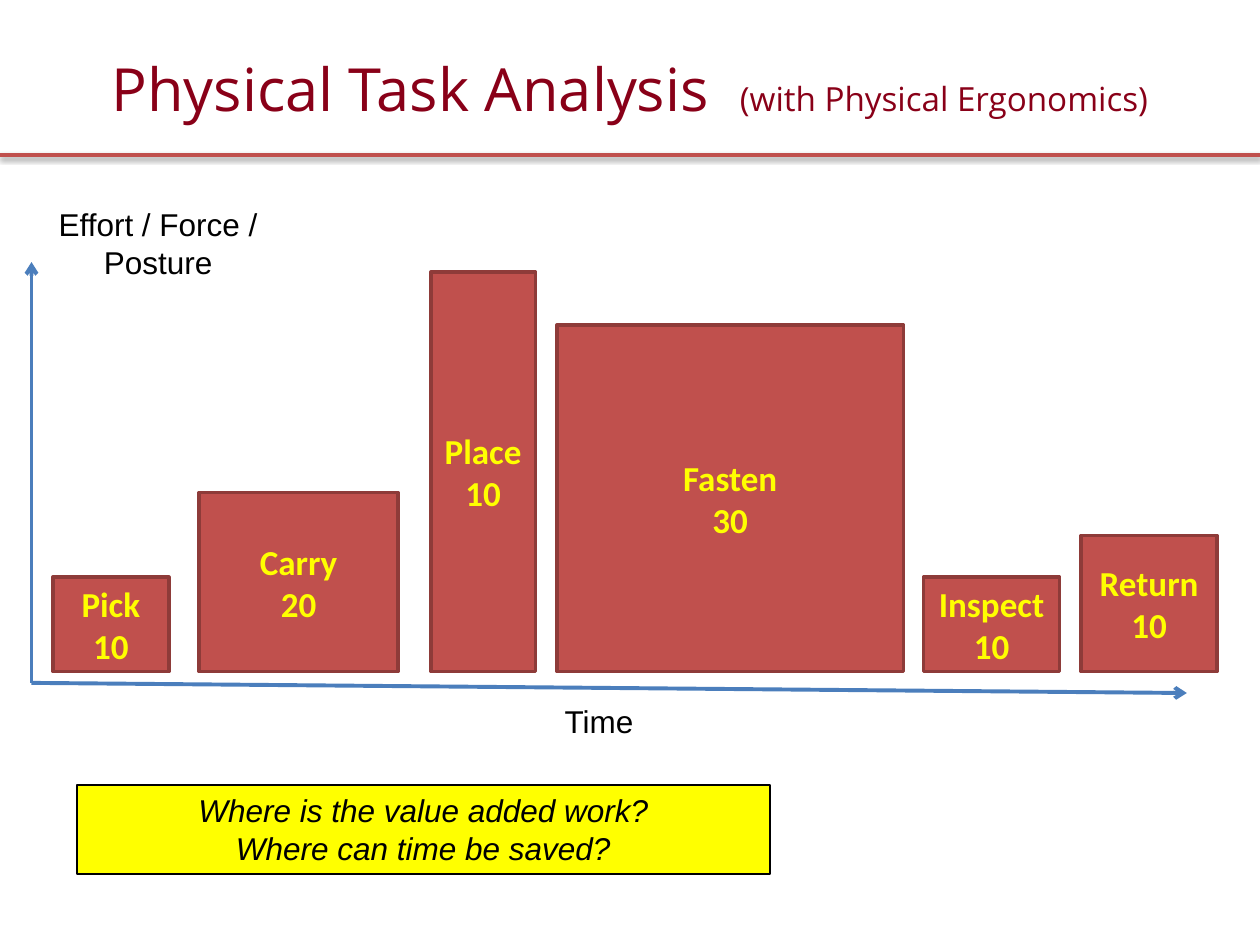
"""Build the physical task analysis slide: effort of each task step over time."""
from lxml.etree import SubElement
from pptx import Presentation
from pptx.dml.color import RGBColor as RGB
from pptx.enum.shapes import MSO_CONNECTOR as CONNECTOR, MSO_SHAPE as SHAPE
from pptx.enum.text import MSO_ANCHOR as ANCHOR, PP_ALIGN as ALIGN
from pptx.oxml.ns import qn
from pptx.util import Inches, Pt

TITLE = [("Physical Task Analysis  ", "title"), ("(with Physical Ergonomics)", "subtitle")]
TASKS = [
    ("Pick", 10, 0.42, 0.92, 0.75),
    ("Carry", 20, 1.58, 1.58, 1.42),
    ("Place", 10, 3.42, 0.83, 3.17),
    ("Fasten", 30, 4.42, 2.75, 2.75),
    ("Inspect", 10, 7.33, 1.08, 0.75),
    ("Return", 10, 8.58, 1.08, 1.08),
]
BASELINE = 5.33
ORIGIN = (0.25, 5.42)
AXIS_ENDS = [(0.25, 2.08), (9.42, 5.5)]
AXIS_LABELS = [
    ("Effort / Force / Posture", (0.17, 1.58, 2.17, 0.71)),
    ("Time", (3.92, 5.52, 1.67, 0.4)),
]
QUESTIONS = ["Where is the value added work?", "Where can time be saved?"]

THEME = {
    "title": {"name": "Open Sans", "size": 34, "color": "890018", "bold": False},
    "subtitle": {"name": "Open Sans", "size": 19, "color": "890018", "bold": False},
    "task": {"name": "Calibri", "size": 20, "color": "FFFF00", "bold": True},
    "label": {"name": "Arial", "size": 18, "color": "000000"},
    "question": {"name": "Arial", "size": 18, "color": "000000", "italic": True},
    "task_box": {"fill": "C0504D", "line": "8E3B39", "width": 2},
    "question_box": {"fill": "FFFF00", "line": "000000", "width": 1},
    "rule": {"line": "C0504D", "width": 2},
    "axis": {"line": "4B7EBC", "width": 2.25},
}


def style_font(font, role):
    for key, value in THEME[role].items():
        if key == "color":
            font.color.rgb = RGB.from_string(value)
        else:
            setattr(font, key, Pt(value) if key == "size" else value)


def write_lines(frame, lines, role, anchor):
    frame.word_wrap = True
    frame.vertical_anchor = anchor
    for index, line in enumerate(lines):
        paragraph = frame.paragraphs[0] if index == 0 else frame.add_paragraph()
        paragraph.alignment = ALIGN.CENTER
        run = paragraph.add_run()
        run.text = line
        style_font(run.font, role)


def style_line(line, look):
    line.color.rgb = RGB.from_string(look["line"])
    line.width = Pt(look["width"])


def add_box(slide, place, lines, look, role, anchor):
    box = slide.shapes.add_shape(SHAPE.RECTANGLE, *map(Inches, place))
    box.shadow.inherit = False
    box.fill.solid()
    box.fill.fore_color.rgb = RGB.from_string(THEME[look]["fill"])
    style_line(box.line, THEME[look])
    write_lines(box.text_frame, lines, role, anchor)


def add_line(slide, start, end, look):
    line = slide.shapes.add_connector(CONNECTOR.STRAIGHT, *map(Inches, start + end))
    style_line(line.line, THEME[look])
    properties = line._element.spPr
    return properties.find(qn("a:ln")), SubElement(properties, qn("a:effectLst"))


def add_title(slide):
    title = slide.shapes.title
    title.left, title.top, title.width, title.height = map(Inches, (0, 0.36, 10, 0.67))
    title.text_frame.vertical_anchor = ANCHOR.MIDDLE
    paragraph = title.text_frame.paragraphs[0]
    paragraph.alignment = ALIGN.CENTER
    for text, role in TITLE:
        run = paragraph.add_run()
        run.text = text
        style_font(run.font, role)


def add_rule(slide):
    _, effects = add_line(slide, (0, 1.23), (10, 1.23), "rule")
    shadow = SubElement(effects, qn("a:outerShdw"), blurRad=str(Pt(3.1)),
                        dist=str(Pt(1.6)), dir="5400000", rotWithShape="0")
    color = SubElement(shadow, qn("a:srgbClr"), val="000000")
    SubElement(color, qn("a:alpha"), val="38000")


def main():
    deck = Presentation()
    deck.slide_width, deck.slide_height = Inches(10), Inches(7.5)
    slide = deck.slides.add_slide(deck.slide_layouts[5])
    add_rule(slide)
    add_title(slide)
    for name, duration, left, width, height in TASKS:
        place = (left, BASELINE - height, width, height)
        add_box(slide, place, [name, str(duration)], "task_box", "task", ANCHOR.MIDDLE)
    for end in AXIS_ENDS:
        outline, _ = add_line(slide, ORIGIN, end, "axis")
        SubElement(outline, qn("a:tailEnd"), type="arrow")
    for text, place in AXIS_LABELS:
        label = slide.shapes.add_textbox(*map(Inches, place))
        write_lines(label.text_frame, [text], "label", ANCHOR.TOP)
    add_box(slide, (0.61, 6.23, 5.5, 0.71), QUESTIONS, "question_box", "question", ANCHOR.TOP)
    deck.save("out.pptx")


if __name__ == "__main__":
    main()
